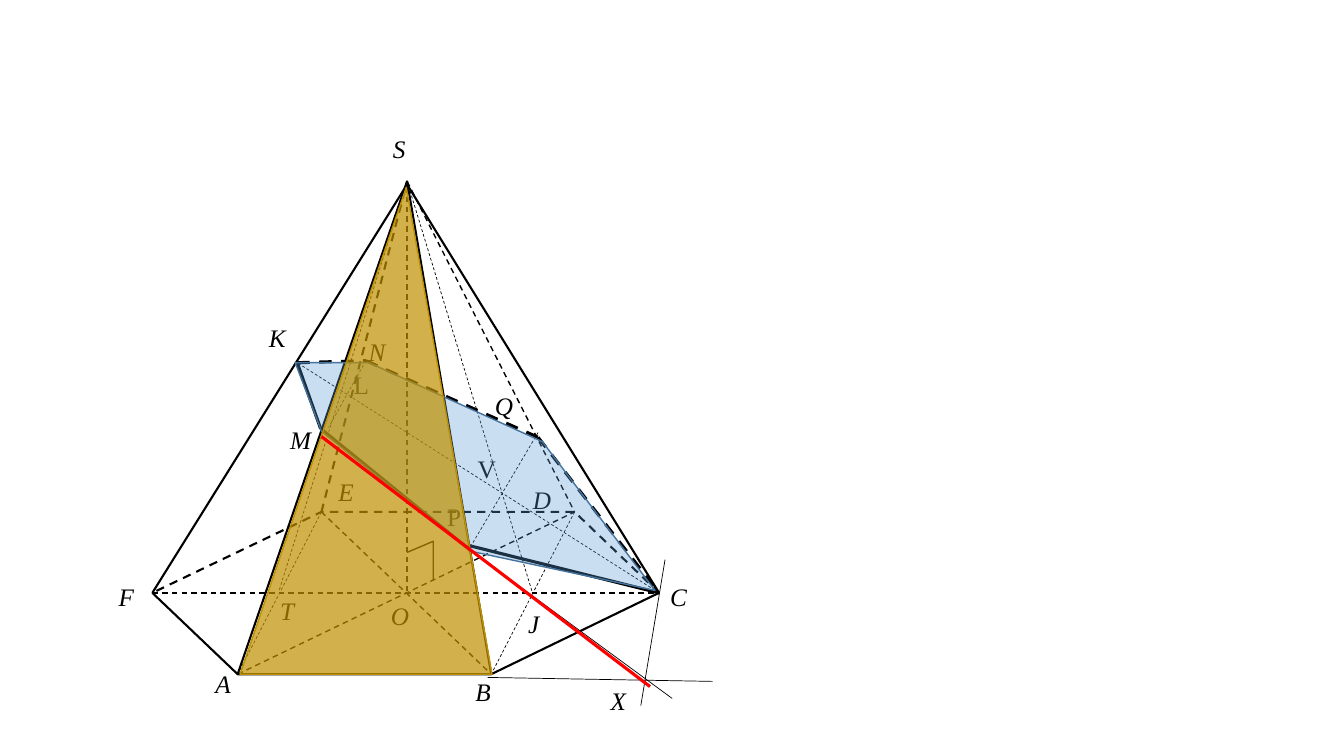
from lxml import etree
from pptx import Presentation
from pptx.dml.color import RGBColor
from pptx.enum.dml import MSO_LINE_DASH_STYLE as Dash
from pptx.enum.shapes import MSO_CONNECTOR as Connector
from pptx.enum.text import PP_ALIGN as Align
from pptx.oxml.ns import qn
from pptx.util import Cm, Pt

BLACK = RGBColor(0x00, 0x00, 0x00)
RED = RGBColor(0xFF, 0x00, 0x00)
BLUE = RGBColor(0x5B, 0x9B, 0xD5)
DARK_BLUE = RGBColor(0x43, 0x73, 0x9E)
GOLD = RGBColor(0xBF, 0x90, 0x00)

presentation = Presentation()
presentation.slide_width = Cm(33.87)
presentation.slide_height = Cm(19.05)
slide = presentation.slides.add_slide(presentation.slide_layouts[6])


def add_segment(start, end, width, dashed=False, color=BLACK):
    connector = slide.shapes.add_connector(
        Connector.STRAIGHT, *(Cm(value) for value in start + end))
    connector.line.color.rgb = color
    connector.line.width = Pt(width)
    if dashed:
        connector.line.dash_style = Dash.DASH
    etree.SubElement(connector._element.spPr, qn("a:effectLst"))


def add_outline(points, width, color=BLACK, dashed=False, fill=None, opacity=100):
    """Draw an open polyline, or a closed translucent polygon when fill is given."""
    first, *others = [(Cm(x), Cm(y)) for x, y in points]
    builder = slide.shapes.build_freeform(*first)
    builder.add_line_segments(others, close=fill is not None)
    shape = builder.convert_to_shape()
    shape.shadow.inherit = False
    shape.line.color.rgb = color
    shape.line.width = Pt(width)
    if dashed:
        shape.line.dash_style = Dash.DASH
    if fill is None:
        shape.fill.background()
    else:
        shape.fill.solid()
        shape.fill.fore_color.rgb = fill
        color_element = shape._element.spPr.find(".//" + qn("a:srgbClr"))
        etree.SubElement(color_element, qn("a:alpha"), val=str(opacity * 1000))


# Vertices of the pyramid and points of the section, in centimetres
S, O = (10.26, 4.57), (10.26, 14.9)
A, B, C = (5.99, 16.99), (12.38, 16.99), (16.61, 14.94)
D, E, F = (14.48, 12.9), (8.1, 12.9), (3.84, 14.94)
K, M, N = (7.49, 9.14), (8.08, 10.8), (9.22, 9.09)
P, Q = (11.86, 13.87), (13.56, 11.02)
T, J = (7.04, 14.86), (13.41, 14.91)

# Pyramid
for start, end, width in [(O, S, 1), (E, S, 1.5), (A, D, 1), (E, B, 1),
                          (F, C, 1), (S, D, 1)]:
    add_segment(start, end, width, dashed=True)
add_outline([F, A, B, C], 1.5)
add_outline([C, D, E, F], 1.5, dashed=True)
add_outline([C, (10.26, 4.65), F], 1.5)
add_outline([B, S, A], 1.5)
right_angle = [(10.26, 13.92), (10.92, 13.64), (10.92, 14.63)]
add_outline(right_angle, 1)

# Auxiliary lines
for start, end in [(E, A), (D, B), (S, T), (S, J), (C, K),
                   ((13.56, 10.9), (11.79, 13.89)), (N, (8.28, 10.77))]:
    add_segment(start, end, 0.5, dashed=True)
for start, end in [(P, (16.94, 17.6)),
                   ((12.29, 17.07), (17.96, 17.17)),
                   ((16.76, 14.1), (16.15, 17.78))]:
    add_segment(start, end, 0.5)

# Section edges
for start, end in [(K, M), (M, P), ((11.79, 13.74), C)]:
    add_segment(start, end, 2.25)
for start, end in [(K, N), (N, Q), (Q, C)]:
    add_segment(start, end, 2.25, dashed=True)

# Point names: left, top, width, italic
labels = {
    "B": (11.73, 16.92, 1.3, True),
    "C": (16.64, 14.53, 1.37, True),
    "A": (5.18, 16.71, 1.3, True),
    "S": (9.65, 3.23, 1.19, True),
    "D": (13.18, 12.09, 1.42, True),
    "O": (9.6, 15.01, 1.42, True),
    "M": (7.06, 10.57, 1.55, True),
    "V": (11.79, 11.3, 0.91, False),
    "P": (11.02, 12.52, 0.81, False),
    "E": (8.28, 11.89, 1.3, True),
    "F": (2.74, 14.53, 1.3, True),
    "K": (6.53, 8, 0.99, True),
    "L": (8.66, 9.17, 0.84, False),
    "N": (9.04, 8.36, 0.94, True),
    "Q": (12.22, 9.7, 0.97, True),
    "J": (13.06, 15.21, 0.79, True),
    "T": (6.81, 14.88, 0.86, True),
    "X": (15.14, 17.15, 0.94, True),
}
for name, (left, top, width, italic) in labels.items():
    label = slide.shapes.add_textbox(Cm(left), Cm(top), Cm(width), Cm(1.02))
    label.text_frame.word_wrap = True
    paragraph = label.text_frame.paragraphs[0]
    paragraph.alignment = Align.CENTER if name == "V" else Align.LEFT
    run = paragraph.add_run()
    run.text = name
    run.font.name = "Times New Roman"
    run.font.size = Pt(18)
    run.font.italic = italic
    run.font.color.rgb = BLACK

# Section plane, face SAB and the line through M and P
section = [(7.44, 9.14), (8.1, 10.87), (11.86, 13.89),
           (16.51, 14.88), (13.67, 11.13), (9.3, 9.14)]
add_outline(section, 1, DARK_BLUE, fill=BLUE, opacity=32)
face = [(6.05, 16.99), (10.24, 4.72), (12.4, 16.99)]
add_outline(face, 1, GOLD, fill=GOLD, opacity=70)
add_segment((8.1, 11), (16.38, 17.3), 2.25, color=RED)

presentation.save("out.pptx")
